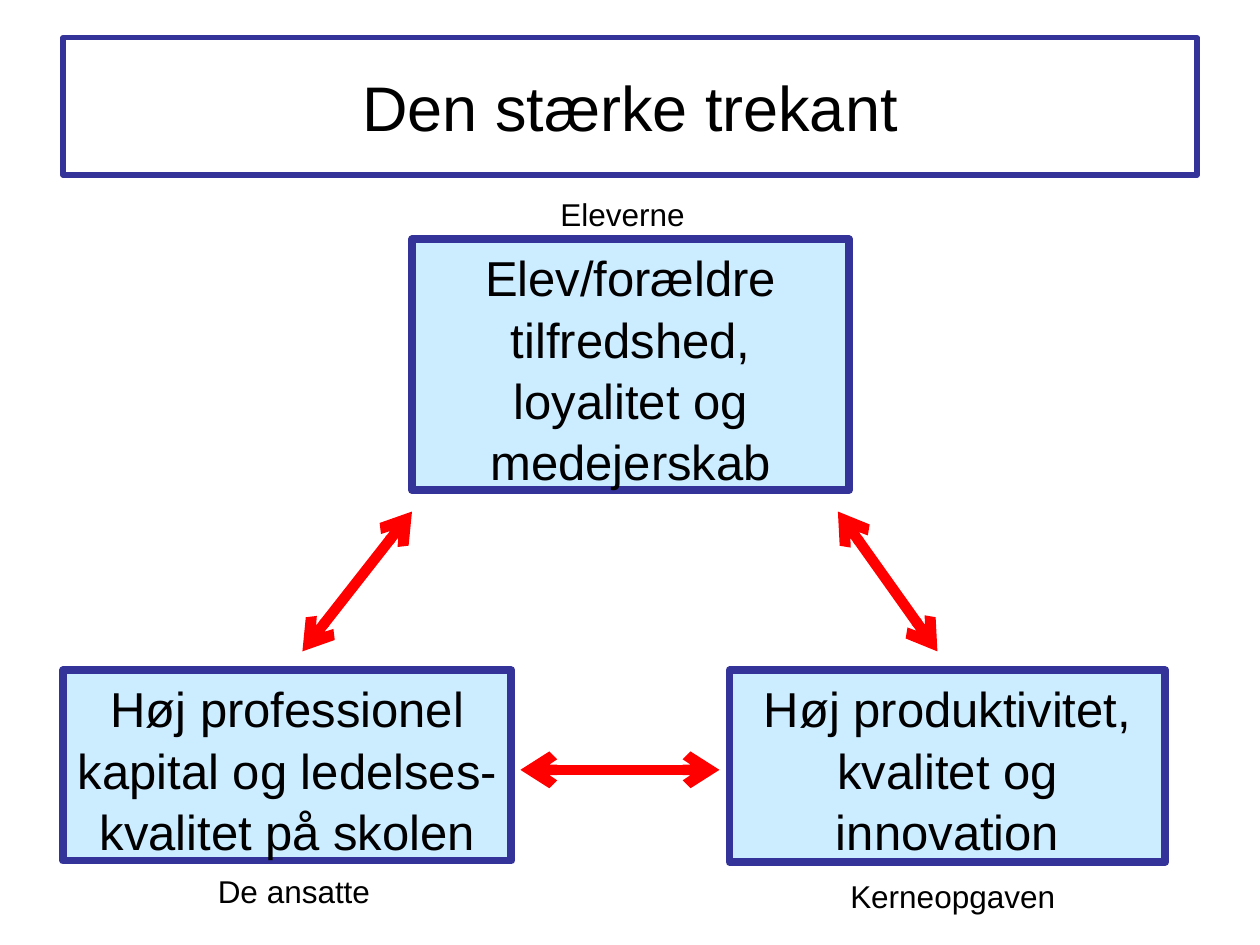
"""Build the slide "Den stærke trekant": three linked boxes with captions."""
from lxml import etree
from pptx import Presentation
from pptx.dml.color import RGBColor
from pptx.enum import shapes, text
from pptx.oxml.ns import qn
from pptx.util import Inches, Pt

COLORS = {"frame": "333399", "box": "CCECFF", "arrow": "FF0000", "ink": "000000"}
FONT = "Arial"
TITLE = ("Den stærke trekant", (0.5, 0.3, 9, 1.09))
BOXES = [
    ("Elev/forældre tilfredshed, loyalitet og medejerskab", (3.27, 1.9, 3.47, 1.99)),
    ("Høj professionel kapital og ledelses-kvalitet på skolen", (0.5, 5.32, 3.56, 1.51)),
    ("Høj produktivitet, kvalitet og innovation", (5.79, 5.32, 3.46, 1.52)),
]
ARROWS = [(3.27, 4.06, 2.4, 5.17), (6.65, 4.06, 7.44, 5.17), (4.13, 6.11, 5.71, 6.11)]
CAPTIONS = [
    ("Eleverne", (4.35, 1.5, 1.2, 0.4)),
    ("Kerneopgaven", (6.65, 6.91, 1.84, 0.4)),
    ("De ansatte", (1.63, 6.87, 1.42, 0.4)),
]


def inches(values):
    return [Inches(value) for value in values]


def color(name):
    return RGBColor.from_string(COLORS[name])


def outline(item, name, width):
    item.line.color.rgb = color(name)
    item.line.width = Pt(width)


def write(item, words, size, align):
    frame = item.text_frame
    frame.text = words
    paragraph = frame.paragraphs[0]
    paragraph.alignment = align
    paragraph.font.name = FONT
    paragraph.font.size = Pt(size)
    paragraph.font.color.rgb = color("ink")
    return frame


def add_title(slide):
    words, place = TITLE
    title = slide.shapes.title
    title.left, title.top, title.width, title.height = inches(place)
    outline(title, "frame", 3)
    frame = write(title, words, 36, text.PP_ALIGN.CENTER)
    frame.vertical_anchor = text.MSO_ANCHOR.MIDDLE


def add_box(slide, words, place):
    box = slide.shapes.add_shape(shapes.MSO_SHAPE.RECTANGLE, *inches(place))
    box.shadow.inherit = False
    box.fill.solid()
    box.fill.fore_color.rgb = color("box")
    outline(box, "frame", 4.5)
    frame = write(box, words, 28, text.PP_ALIGN.CENTER)
    frame.word_wrap = True
    frame.vertical_anchor = text.MSO_ANCHOR.TOP
    frame.auto_size = text.MSO_AUTO_SIZE.SHAPE_TO_FIT_TEXT
    frame.paragraphs[0].line_spacing = 1.04


def add_arrow(slide, ends):
    arrow = slide.shapes.add_connector(shapes.MSO_CONNECTOR.STRAIGHT, *inches(ends))
    outline(arrow, "arrow", 6)
    stroke = arrow.line._get_or_add_ln()
    for end in ("a:headEnd", "a:tailEnd"):
        etree.SubElement(stroke, qn(end), type="arrow")
    etree.SubElement(arrow._element.spPr, qn("a:effectLst"))


def add_caption(slide, words, place):
    caption = slide.shapes.add_textbox(*inches(place))
    frame = write(caption, words, 18, text.PP_ALIGN.LEFT)
    frame.word_wrap = False
    frame.auto_size = text.MSO_AUTO_SIZE.SHAPE_TO_FIT_TEXT


def main():
    deck = Presentation()
    deck.slide_width, deck.slide_height = inches((10, 7.5))
    slide = deck.slides.add_slide(deck.slide_layouts[5])
    add_title(slide)
    for words, place in BOXES:
        add_box(slide, words, place)
    for ends in ARROWS:
        add_arrow(slide, ends)
    for words, place in CAPTIONS:
        add_caption(slide, words, place)
    deck.save("out.pptx")


if __name__ == "__main__":
    main()
